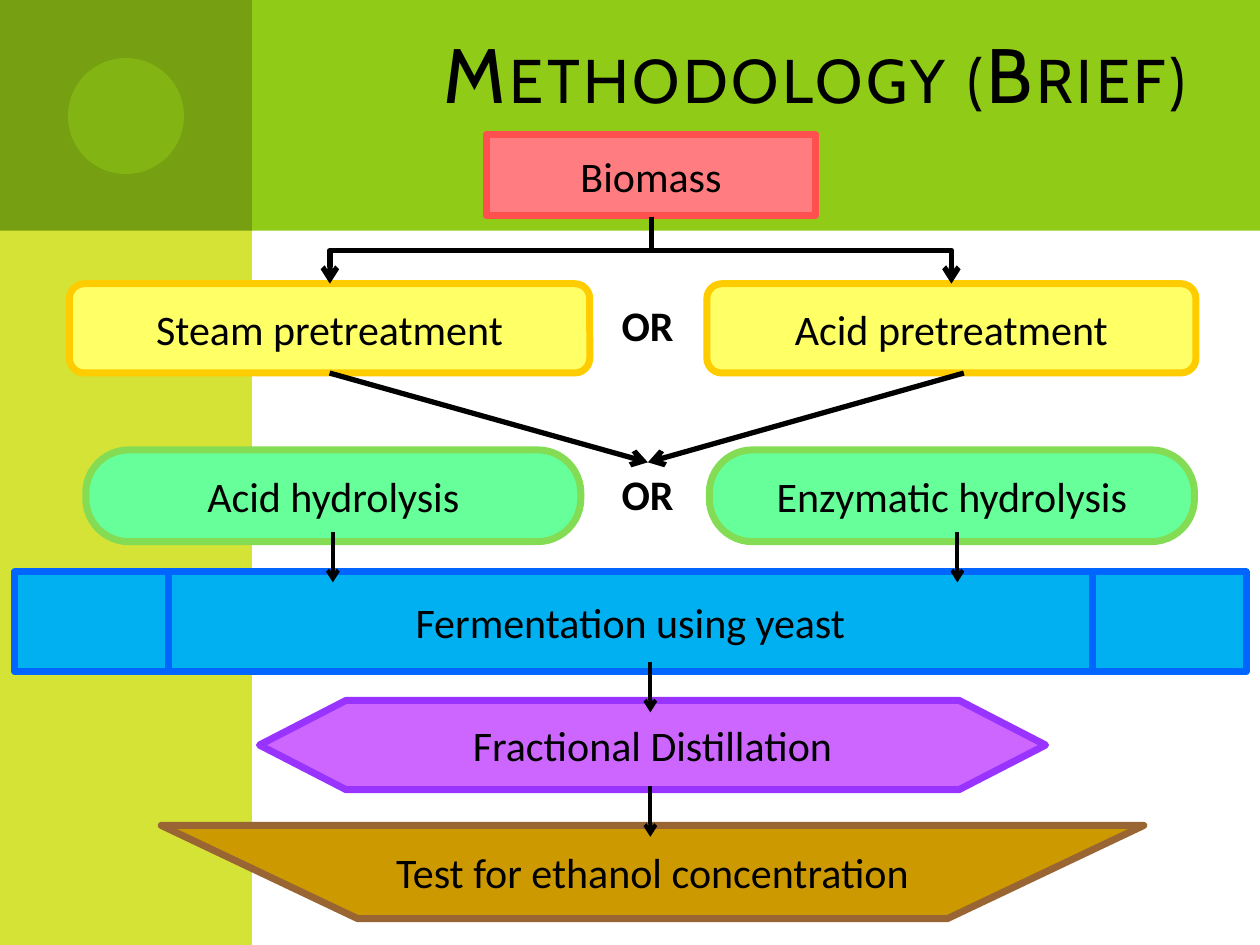
"""Build the methodology flowchart slide."""
from lxml import etree
from pptx import Presentation
from pptx import util as u
from pptx.dml.color import RGBColor
from pptx.enum import shapes, text
from pptx.oxml.ns import qn

SHAPE = shapes.MSO_SHAPE
LINE = shapes.MSO_CONNECTOR


def color(value):
    return RGBColor.from_string(value)


class FlowSlide:
    font = "Calibri"
    size = 24
    ink = "000000"
    border = 4

    def __init__(self, slide):
        self.slide = slide

    def set_text(self, shape, words, align=text.PP_ALIGN.CENTER, font=None, size=None, bold=None):
        frame = shape.text_frame
        frame.word_wrap = True
        paragraph = frame.paragraphs[0]
        paragraph.text = words
        paragraph.alignment = align
        paragraph.font.name = font or self.font
        paragraph.font.size = u.Pt(size or self.size)
        paragraph.font.bold = bold
        paragraph.font.color.rgb = color(self.ink)

    def panel(self, kind, box, fill, alpha=None):
        shape = self.slide.shapes.add_shape(kind, *map(u.Cm, box))
        shape.shadow.inherit = False
        shape.fill.solid()
        shape.fill.fore_color.rgb = color(fill)
        shape.line.fill.background()
        if alpha:
            fill_color = shape._element.spPr.find(qn("a:solidFill"))[0]
            etree.SubElement(fill_color, qn("a:alpha"), val=str(alpha * 1000))
        return shape

    def step(self, kind, box, words, fill, line, adjust=None):
        shape = self.panel(kind, box, fill)
        shape.line.color.rgb = color(line)
        shape.line.width = u.Pt(self.border)
        if adjust is not None:
            shape.adjustments[0] = adjust
        shape.text_frame.vertical_anchor = text.MSO_ANCHOR.MIDDLE
        self.set_text(shape, words)
        return shape

    def label(self, box, words, **style):
        shape = self.slide.shapes.add_textbox(*map(u.Cm, box))
        self.set_text(shape, words, **style)
        return shape

    def title(self, box, words):
        shape = self.label(box, words, align=text.PP_ALIGN.RIGHT, font="Cabin", size=44)
        shape.text_frame.vertical_anchor = text.MSO_ANCHOR.MIDDLE
        properties = shape.text_frame.paragraphs[0].runs[0]._r.get_or_add_rPr()
        properties.set("cap", "small")
        properties.set("spc", "200")

    def arrow(self, start, end, width=3, kind=LINE.STRAIGHT):
        connector = self.slide.shapes.add_connector(kind, *map(u.Cm, (*start, *end)))
        connector.line.color.rgb = color(self.ink)
        connector.line.width = u.Pt(width)
        properties = connector._element.spPr
        etree.SubElement(properties.find(qn("a:ln")), qn("a:tailEnd"), type="arrow")
        etree.SubElement(properties, qn("a:effectLst"))
        return connector

    def branch(self, start, end):
        (x1, y1), (x2, y2) = start, end
        middle_x, middle_y = (x1 + x2) / 2, (y1 + y2) / 2
        spread = abs(x2 - x1) / 2
        drop = (y2 - y1) / 2 * (1 if x2 < x1 else -1)
        connector = self.arrow((middle_x - drop, middle_y - spread),
                               (middle_x + drop, middle_y + spread), kind=LINE.ELBOW)
        angle = 90 if x2 < x1 else 270
        connector._element.spPr.find(qn("a:xfrm")).set("rot", str(angle * 60000))


def main():
    presentation = Presentation()
    presentation.slide_width, presentation.slide_height = u.Cm(25.4), u.Cm(19.05)
    flow = FlowSlide(presentation.slides.add_slide(presentation.slide_layouts[6]))

    flow.panel(SHAPE.RECTANGLE, (1.27, 0, 24.13, 4.65), "8FCB17")
    flow.panel(SHAPE.RECTANGLE, (0, 0, 5.08, 19.05), "D4E336")
    flow.panel(SHAPE.RECTANGLE, (0, 0, 5.08, 4.65), "769F11")
    flow.panel(SHAPE.OVAL, (1.37, 1.17, 2.34, 2.34), "8FCB17", alpha=50)
    flow.title((8.15, 0.13, 17.35, 2.69), "Methodology (Brief)")

    flow.step(SHAPE.FLOWCHART_PROCESS, (9.8, 2.72, 6.65, 1.63), "Biomass", "FF7C80", "FF5050")
    yellow, green = ("FFFF66", "FFCC00"), ("66FF99", "83DC54", 0.47)
    rounded = SHAPE.ROUNDED_RECTANGLE
    steam = flow.step(rounded, (1.4, 5.72, 10.49, 1.8), "Steam pretreatment", *yellow)
    flow.step(rounded, (14.25, 5.72, 9.86, 1.8), "Acid pretreatment", *yellow)
    flow.step(rounded, (1.73, 9.07, 9.98, 1.85), "Acid hydrolysis", *green)
    flow.step(rounded, (14.3, 9.07, 9.78, 1.85), "Enzymatic hydrolysis", *green)
    flow.step(SHAPE.FLOWCHART_PREDEFINED_PROCESS, (0.3, 11.53, 24.82, 2.01),
              "Fermentation using yeast", "00B0F0", "0066FF")
    flow.step(SHAPE.HEXAGON, (5.23, 14.12, 15.85, 1.8),
              "Fractional Distillation", "CC66FF", "9933FF", 0.97)
    flow.step(SHAPE.FLOWCHART_MANUAL_OPERATION, (3.25, 16.64, 19.81, 1.88),
              "Test for ethanol concentration", "CC9900", "996633")

    for top in (5.92, 9.32):
        flow.label((11.71, top, 2.69, 1.27), "OR", bold=True)

    for x in (6.65, 19.18):
        flow.branch((13.13, 4.37), (x, 5.72))
    merge = (13.06, 9.32)
    flow.arrow((6.65, 7.52), merge).begin_connect(steam, 2)
    flow.arrow((19.43, 7.52), merge)
    for x, y in ((6.71, 10.72), (19.3, 10.72), (13.11, 13.34), (13.11, 15.85)):
        flow.arrow((x, y), (x, y + 1.02), width=2.25)

    presentation.save("out.pptx")


if __name__ == "__main__":
    main()
